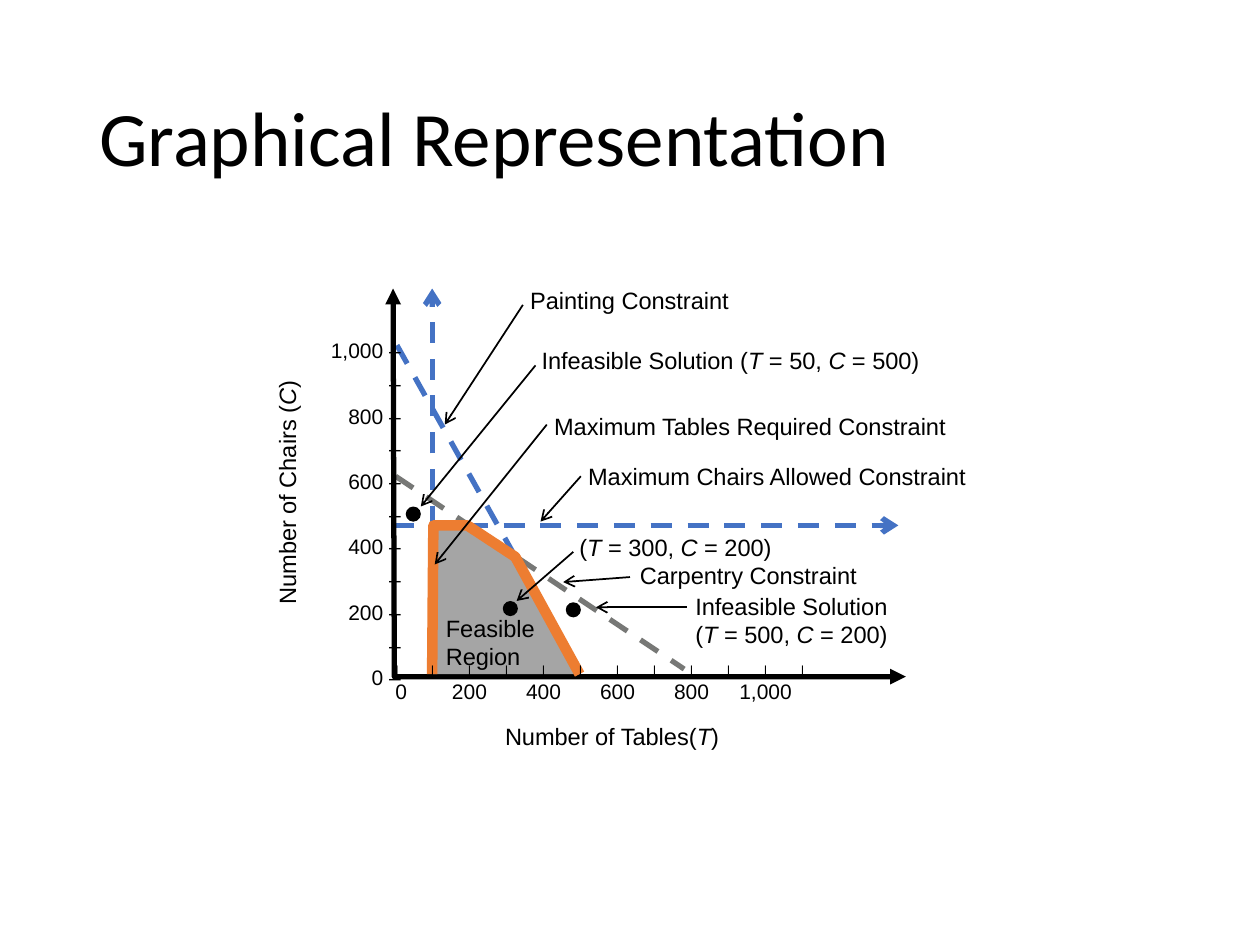
from lxml import etree
from pptx import Presentation
from pptx import util as u
from pptx.dml.color import RGBColor
from pptx.enum import dml, shapes, text
from pptx.oxml.ns import qn

# Grid of 1000 columns by 750 rows
CELL = u.Inches(0.01)
rgb = RGBColor.from_string
BLACK, BLUE, GREY, ORANGE = "000000", "4472C4", "777876", "ED7D31"

prs = Presentation()
prs.slide_width, prs.slide_height = 1000 * CELL, 750 * CELL
slide = prs.slides.add_slide(prs.slide_layouts[6])


def add_label(box, lines, size=13.5, font="Arial", wrap=False):
    """Write lines into a box; the parts between asterisks are italic."""
    label = slide.shapes.add_textbox(*(v * CELL for v in box))
    frame = label.text_frame
    frame.word_wrap = wrap
    frame.text = "\n".join(lines)
    for paragraph, line in zip(frame.paragraphs, lines):
        paragraph.text = ""
        for i, part in enumerate(line.split("*")):
            if part:
                run = paragraph.add_run()
                run.text = part
                run.font.size, run.font.name = u.Pt(size), font
                run.font.color.rgb = rgb(BLACK)
                run.font.italic = i % 2 == 1
    return label


def add_line(ends, color, width, dashed=False, arrow=True):
    """Draw a straight line, with an open arrowhead at its far end if asked."""
    line = slide.shapes.add_connector(
        shapes.MSO_CONNECTOR.STRAIGHT, *(v * CELL for v in ends))
    line.line.color.rgb, line.line.width = rgb(color), u.Pt(width)
    if dashed:
        line.line.dash_style = dml.MSO_LINE.DASH
    props = line._element.spPr
    if arrow:
        etree.SubElement(props.find(qn("a:ln")), qn("a:tailEnd"), type="arrow")
    etree.SubElement(props, qn("a:effectLst"))


# Title
title = add_label((69, 40, 862, 145), ["Graphical Representation"], 44, "Calibri", True)
title.text_frame.vertical_anchor = text.MSO_ANCHOR.MIDDLE
title.text_frame.paragraphs[0].line_spacing = 0.9

# Constraint lines: carpentry, painting, maximum chairs, maximum tables
for ends, color, arrow in [
    ((314, 378, 543, 531), GREY, False),
    ((315, 274, 460, 533), BLUE, False),
    ((312, 417, 713, 417), BLUE, True),
    ((343, 535, 343, 229), BLUE, True),
]:
    add_line(ends, color, 3, dashed=True, arrow=arrow)

# Axes, feasible region and its border
region = [(343, 535), (344, 417), (371, 417), (409, 442), (460, 535)]
for points, fill, stroke, width in [
    ([(312, 229), (313, 537), (719, 537)], None, BLACK, 3),
    (region, "A5A5A5", None, 0),
    (region, None, ORANGE, 6),
]:
    builder = slide.shapes.build_freeform(*points[0], scale=CELL)
    builder.add_line_segments(points[1:], close=False)
    outline = builder.convert_to_shape()
    outline.shadow.inherit = False
    if fill:
        outline.fill.solid()
        outline.fill.fore_color.rgb = rgb(fill)
        outline.line.fill.background()
    else:
        outline.fill.background()
        outline.line.color.rgb, outline.line.width = rgb(stroke), u.Pt(width)
    if stroke == BLACK:
        for end in ("a:headEnd", "a:tailEnd"):
            etree.SubElement(outline._element.spPr.find(qn("a:ln")), qn(end), type="triangle")

# Vertical scale: a number at every second tick
ticks = ["1,000 –", "–", "800 –", "–", "600 –", "–", "400 –", "–", "200 –", "–", "0 –"]
chairs_scale = add_label((252, 257, 76, 299), ticks, 12)
for paragraph in chairs_scale.text_frame.paragraphs:
    paragraph.alignment = text.PP_ALIGN.RIGHT
    paragraph.line_spacing = 1.3

# Horizontal scale: ticks and numbers on evenly spaced centred tabs
tables_scale = add_label(
    (304, 521, 389, 43),
    ["\t".join("|" * 12), "\t\t".join(["0", "200", "400", "600", "800", "1,000"])],
    12, wrap=True)
tick_row, number_row = tables_scale.text_frame.paragraphs
tick_row.runs[0].font.size = u.Pt(7.5)
for paragraph in (tick_row, number_row):
    tabs = etree.SubElement(paragraph._p.get_or_add_pPr(), qn("a:tabLst"))
    for n in range(1, 12):
        etree.SubElement(tabs, qn("a:tab"), pos=str(235 * CELL * n // 8), algn="ctr")

# Axis names
chairs_name = add_label((128, 373, 200, 33), ["Number of Chairs (*C*)"])
chairs_name.rotation = 270
add_label((391, 568, 192, 33), ["Number of Tables(*T*)"])

# Solution points
for left, top in [(322, 402), (449, 478), (399, 477)]:
    point = slide.shapes.add_shape(
        shapes.MSO_SHAPE.OVAL, left * CELL, top * CELL, 12 * CELL, 12 * CELL)
    point.shadow.inherit = False
    point.fill.solid()
    point.fill.fore_color.rgb = rgb(BLACK)
    point.line.fill.background()

# Callouts with their arrows
for box, lines, ends in [
    ((411, 222, 180, 33), ["Painting Constraint"], (415, 242, 353, 337)),
    ((420, 270, 324, 33), ["Infeasible Solution (*T* = 50, *C* = 500)"], (425, 290, 334, 402)),
    ((430, 322, 335, 33), ["Maximum Tables Required Constraint"], (434, 337, 345, 448)),
    ((457, 362, 324, 33), ["Maximum Chairs Allowed Constraint"], (461, 378, 429, 414)),
    ((450, 418, 175, 33), ["(*T* = 300, *C* = 200)"], (455, 438, 410, 477)),
    ((498, 440, 195, 33), ["Carpentry Constraint"], (500, 458, 447, 462)),
    ((542, 465, 175, 56), ["Infeasible Solution", "(*T* = 500, *C* = 200)"],
     (545, 482, 473, 482)),
]:
    add_label(box, lines)
    add_line(ends, BLACK, 1)
add_label((344, 482, 95, 56), ["Feasible Region"], wrap=True)

prs.save("out.pptx")
